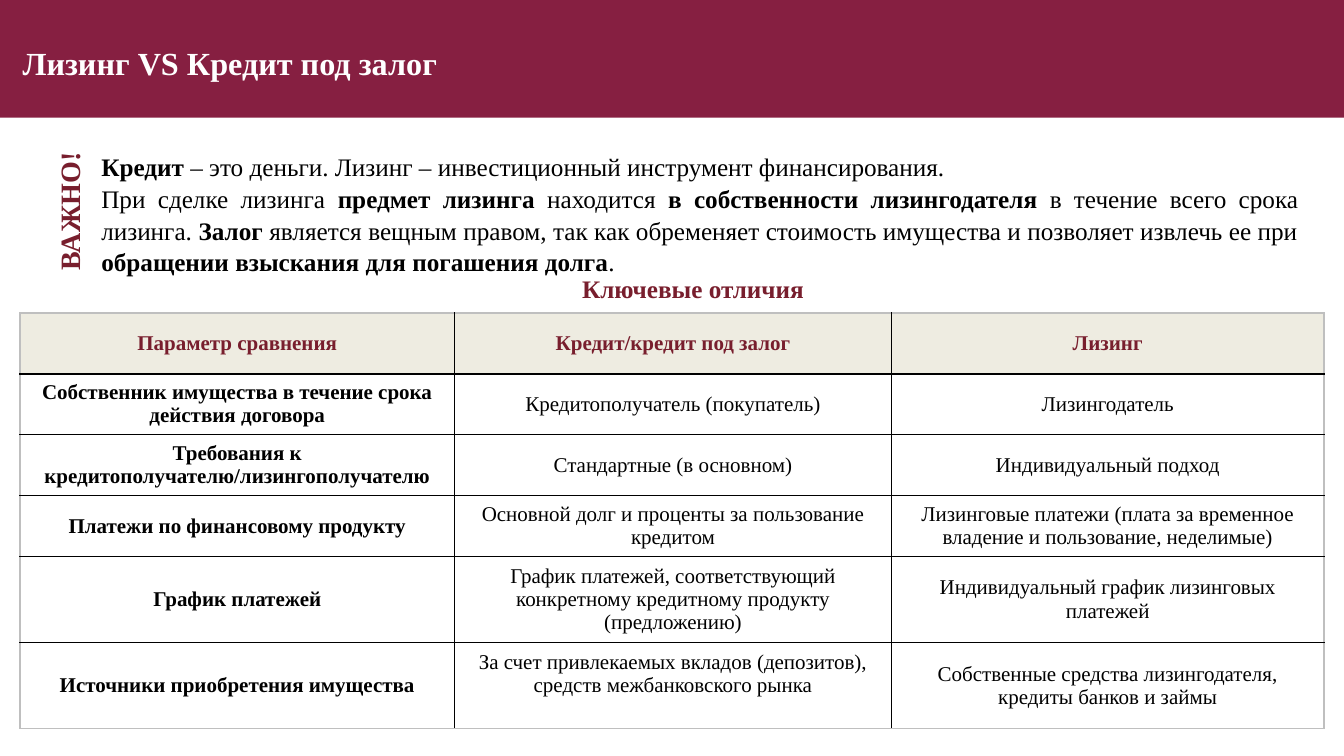
from lxml import etree
from pptx import Presentation
from pptx.dml.color import RGBColor
from pptx.enum.shapes import MSO_SHAPE
from pptx.enum.text import MSO_ANCHOR, PP_ALIGN
from pptx.oxml.ns import qn
from pptx.util import Pt

PX = 9525
FONT = "Times New Roman"
WINE = RGBColor(0x86, 0x1F, 0x41)
RED = RGBColor(0x78, 0x1E, 0x2D)
CREAM = RGBColor(0xEE, 0xEC, 0xE1)
GRAY = RGBColor(0xBF, 0xBF, 0xBF)
BLACK = RGBColor(0, 0, 0)
WHITE = RGBColor(0xFF, 0xFF, 0xFF)
RECT = MSO_SHAPE.RECTANGLE
LEFT, CENTER, JUSTIFY = PP_ALIGN.LEFT, PP_ALIGN.CENTER, PP_ALIGN.JUSTIFY
TOP, MIDDLE = MSO_ANCHOR.TOP, MSO_ANCHOR.MIDDLE

# Each paragraph is a list of (text, bold) runs.
INTRO = [
    [("Кредит", True),
     (" – это деньги. Лизинг – инвестиционный инструмент финансирования.", False)],
    [("При сделке лизинга ", False),
     ("предмет лизинга ", True),
     ("находится ", False),
     ("в собственности лизингодателя ", True),
     ("в течение всего срока лизинга. ", False),
     ("Залог", True),
     (" является вещным правом, так как обременяет стоимость имущества "
      "и позволяет извлечь ее при ", False),
     ("обращении взыскания для погашения долга", True),
     (".", False)],
]
ROWS = [
    ("Параметр сравнения", "Кредит/кредит под залог", "Лизинг"),
    ("Собственник имущества в течение срока действия договора",
     "Кредитополучатель (покупатель)", "Лизингодатель"),
    ("Требования к кредитополучателю/лизингополучателю",
     "Стандартные (в основном)", "Индивидуальный подход"),
    ("Платежи по финансовому продукту",
     "Основной долг и проценты за пользование кредитом",
     "Лизинговые платежи (плата за временное владение и пользование, неделимые)"),
    ("График платежей",
     "График платежей, соответствующий конкретному кредитному продукту (предложению)",
     "Индивидуальный график лизинговых платежей"),
    ("Источники приобретения имущества",
     "За счет привлекаемых вкладов (депозитов), средств межбанковского рынка",
     "Собственные средства лизингодателя, кредиты банков и займы"),
]
WIDTHS = (414, 416, 412)
HEIGHTS = (58, 58, 58, 58, 82, 82)


def write(frame, paras, size, color=BLACK, bold=False, align=CENTER, space=1.0):
    """Fill a frame with a plain string or with paragraphs of (text, bold) runs."""
    if isinstance(paras, str):
        paras = [[(paras, bold)]]
    for i, runs in enumerate(paras):
        para = frame.add_paragraph() if i else frame.paragraphs[0]
        para.alignment = align
        para.line_spacing = space
        for text, heavy in runs:
            run = para.add_run()
            run.text = text
            font = run.font
            font.name, font.size, font.bold = FONT, Pt(size), heavy
            font.color.rgb = color


def border(cell, side, color, width):
    props = cell._tc.get_or_add_tcPr()
    line = etree.SubElement(props, qn(f"a:ln{side}"), w=str(Pt(width)))
    fill = etree.SubElement(line, qn("a:solidFill"))
    etree.SubElement(fill, qn("a:srgbClr"), val=str(color))


class Deck:
    def __init__(self, wide, high):
        self.show = Presentation()
        self.show.slide_width, self.show.slide_height = wide * PX, high * PX
        self.slide = self.show.slides.add_slide(self.show.slide_layouts[6])

    def bar(self, *box, color):
        shape = self.slide.shapes.add_shape(RECT, *(n * PX for n in box))
        shape.shadow.inherit = False
        shape.fill.solid()
        shape.fill.fore_color.rgb = color
        shape.line.fill.background()

    def text(self, *box, paras, turn=0, anchor=TOP, **style):
        shape = self.slide.shapes.add_textbox(*(n * PX for n in box))
        shape.rotation = turn
        frame = shape.text_frame
        frame.word_wrap = True
        frame.vertical_anchor = anchor
        write(frame, paras, **style)

    def table(self, left, top, widths, heights, rows):
        box = (left, top, sum(widths), sum(heights))
        table = self.slide.shapes.add_table(
            len(rows), len(widths), *(n * PX for n in box)).table
        for col, wide in zip(table.columns, widths):
            col.width = wide * PX
        for row, high in zip(table.rows, heights):
            row.height = high * PX
        for r, row in enumerate(rows):
            for c, text in enumerate(row):
                self.cell(table, r, c, text)
        # Text in the last middle cell sits above the centre.
        table.cell(len(rows) - 1, 1).margin_bottom = 27 * PX

    def cell(self, table, r, c, text):
        cell = table.cell(r, c)
        cell.vertical_anchor = MIDDLE
        write(cell.text_frame, text, 15, RED if r == 0 else BLACK, r == 0 or c == 0)
        last, end = len(table.rows) - 1, len(table.columns) - 1
        edges = {"L": c == 0, "R": c == end, "T": r == 0, "B": r == last}
        for side, outer in edges.items():
            rule = (side, r) in (("B", 0), ("T", 1))
            border(cell, side, GRAY if outer else BLACK, 2 if rule else 1)
        cell.fill.solid()
        cell.fill.fore_color.rgb = CREAM if r == 0 else WHITE


def main():
    deck = Deck(1280, 720)
    deck.bar(0, 0, 1280, 112, color=WINE)
    deck.text(12, 32, 1053, 56, paras="Лизинг VS Кредит под залог", anchor=MIDDLE,
              size=23, color=WHITE, bold=True, align=LEFT)
    deck.text(87, 138, 1159, 126, paras=INTRO, size=18, align=JUSTIFY, space=1.05)
    deck.text(-2, 180, 136, 42, paras="ВАЖНО!", turn=270, size=20, color=RED, bold=True)
    deck.text(60, 253, 1200, 44, paras="Ключевые отличия", anchor=MIDDLE,
              size=18, color=RED, bold=True)
    deck.table(19, 298, WIDTHS, HEIGHTS, ROWS)
    deck.show.save("out.pptx")


if __name__ == "__main__":
    main()
